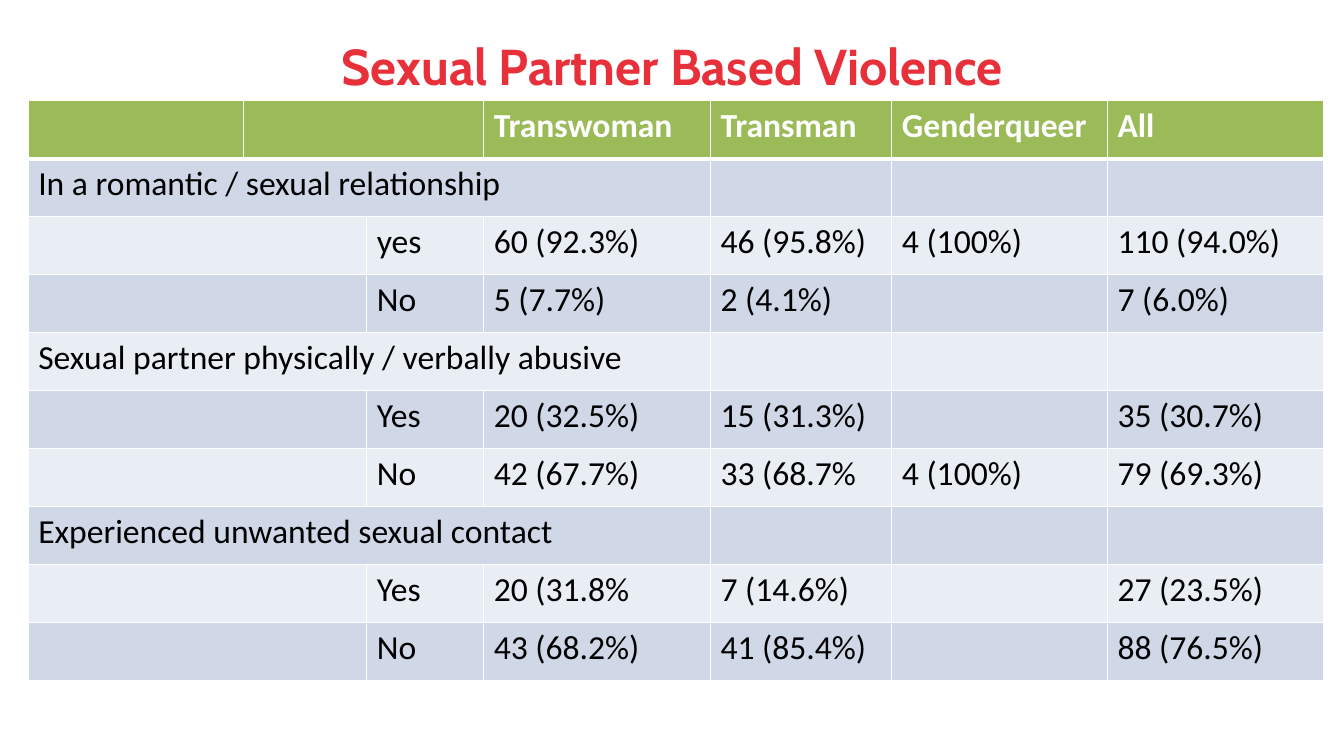
from dataclasses import dataclass

from lxml import etree
from pptx import Presentation
from pptx.dml.color import RGBColor
from pptx.enum.text import MSO_ANCHOR, PP_ALIGN
from pptx.oxml.ns import qn
from pptx.util import Pt

MIDDLE = MSO_ANCHOR.MIDDLE
CENTER = PP_ALIGN.CENTER
PX = 4572  # 200 px to the inch


@dataclass(frozen=True)
class Theme:
    red: str = "E8303B"
    green: str = "9BBB59"
    bands: tuple = ("E9EDF4", "D0D8E8")
    white: str = "FFFFFF"
    black: str = "000000"
    title_font: str = "Cabin"
    body_font: str = "Calibri"
    title_size: int = 36
    body_size: int = 24
    thin: int = 1
    thick: int = 3


THEME = Theme()
TITLE = "Sexual Partner Based Violence"
HEADS = ["Transwoman", "Transman", "Genderqueer", "All"]
# Each topic: its name and the answer rows below it
TOPICS = [
    ("In a romantic / sexual relationship", [
        ["yes", "60 (92.3%)", "46 (95.8%)", "4 (100%)", "110 (94.0%)"],
        ["No", "5 (7.7%)", "2 (4.1%)", "", "7 (6.0%)"]]),
    ("Sexual partner physically / verbally abusive", [
        ["Yes", "20 (32.5%)", "15 (31.3%)", "", "35 (30.7%)"],
        ["No", "42 (67.7%)", "33 (68.7%", "4 (100%)", "79 (69.3%)"]]),
    ("Experienced unwanted sexual contact", [
        ["Yes", "20 (31.8%", "7 (14.6%)", "", "27 (23.5%)"],
        ["No", "43 (68.2%)", "41 (85.4%)", "", "88 (76.5%)"]]),
]
COLS = [428, 244, 232, 450, 360, 428, 428]
ROW = 115


def box(*sides):
    return [side * PX for side in sides]


def style(par, font, size, color, bold):
    for run in par.runs:
        run.font.name = font
        run.font.size = Pt(size)
        run.font.color.rgb = RGBColor.from_string(color)
        run.font.bold = bold


def add_title(slide):
    title = slide.shapes.title
    title.left, title.top, title.width, title.height = box(134, 60, 2400, 140)
    frame = title.text_frame
    frame.text = TITLE
    frame.vertical_anchor = MIDDLE
    par = frame.paragraphs[0]
    par.alignment = CENTER
    style(par, THEME.title_font, THEME.title_size, THEME.red, True)


def set_edges(cell, top, bottom):
    props = cell._tc.get_or_add_tcPr()
    widths = {"L": THEME.thin, "R": THEME.thin, "T": top, "B": bottom}
    for spot, (side, width) in enumerate(widths.items()):
        line = etree.Element(qn(f"a:ln{side}"), w=str(Pt(width)))
        fill = etree.SubElement(line, qn("a:solidFill"))
        etree.SubElement(fill, qn("a:srgbClr"), val=THEME.white)
        props.insert(spot, line)


def fill_cell(cell, text, row):
    head = row == 0
    cell.fill.solid()
    back = THEME.green if head else THEME.bands[row % 2]
    cell.fill.fore_color.rgb = RGBColor.from_string(back)
    set_edges(cell, THEME.thick if row == 1 else THEME.thin,
              THEME.thick if head else THEME.thin)
    cell.text_frame.text = text
    style(cell.text_frame.paragraphs[0], THEME.body_font, THEME.body_size,
          THEME.white if head else THEME.black, head)


def list_rows():
    """Give each row's texts with the first and last column it merges."""
    rows = [(["", "", ""] + HEADS, 1, 2)]
    for name, answers in TOPICS:
        rows.append(([name] + [""] * 6, 0, 3))
        rows += [(["", ""] + answer, 0, 1) for answer in answers]
    return rows


def add_grid(slide):
    rows = list_rows()
    area = box(56, 200, sum(COLS), ROW * len(rows))
    grid = slide.shapes.add_table(len(rows), len(COLS), *area).table
    for col, width in zip(grid.columns, COLS):
        col.width = width * PX
    for r, (texts, first, last) in enumerate(rows):
        grid.rows[r].height = ROW * PX
        for c, text in enumerate(texts):
            fill_cell(grid.cell(r, c), text, r)
        grid.cell(r, first).merge(grid.cell(r, last))


def main():
    deck = Presentation()
    deck.slide_width, deck.slide_height = box(2667, 1500)
    slide = deck.slides.add_slide(deck.slide_layouts[5])
    add_title(slide)
    add_grid(slide)
    deck.save("out.pptx")


if __name__ == "__main__":
    main()
